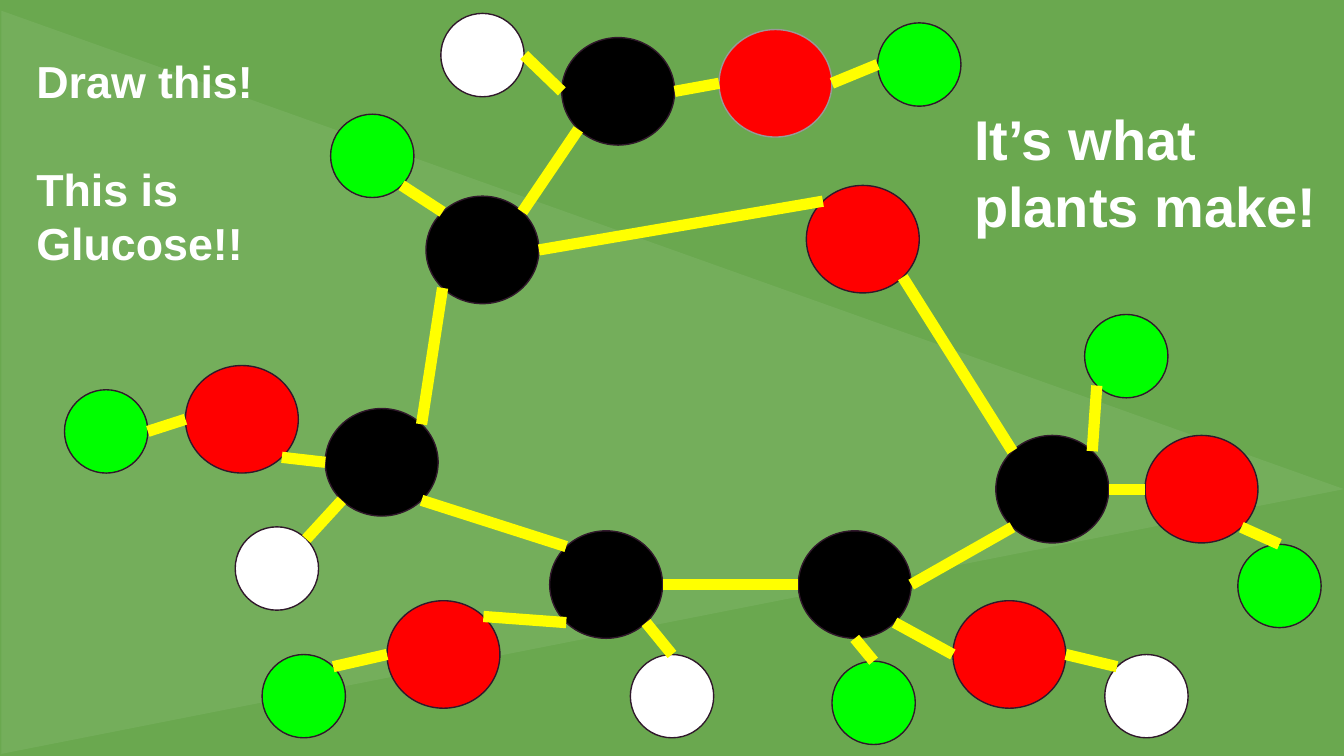
from dataclasses import dataclass
from math import cos, radians, sin
from typing import NamedTuple

from pptx import Presentation
from pptx import util as u
from pptx.dml.color import RGBColor
from pptx.enum import shapes, text
from pptx.oxml.ns import qn
from lxml import etree

PX = 9144  # EMU per px: 100 px to the inch
SLIDE_WIDTH = 1000 * PX
SLIDE_HEIGHT = SLIDE_WIDTH * 9 // 16


@dataclass(frozen=True)
class Theme:
    background: str = "6AA84F"
    beam: str = "FFFFFF"
    beam_alpha: int = 7
    ink: str = "FFFFFF"
    bond: str = "FFFF00"
    outline: str = "30182B"
    soft_outline: str = "999999"
    font: str = "Arial"
    title_size: int = 24
    remark_size: int = 30
    bond_width: int = 6
    outline_width: float = 0.75


THEME = Theme()


class Element(NamedTuple):
    width: int
    height: int
    color: str


CARBON = Element(84, 80, "000000")
OXYGEN = Element(84, 80, "FF0000")
GREEN_HYDROGEN = Element(62, 62, "00FF00")
WHITE_HYDROGEN = Element(62, 62, "FFFFFF")


class Atom(NamedTuple):
    element: Element
    left: int
    top: int
    outline: str = THEME.outline


class Bond(NamedTuple):
    start: str
    start_side: str
    end: str
    end_side: str


# Carbons are numbered as in glucose; other atoms take their carbon's number
ATOMS = {
    "C5": Atom(CARBON, 317, 146),
    "C4": Atom(CARBON, 242, 304),
    "C3": Atom(CARBON, 409, 395),
    "C2": Atom(CARBON, 594, 395),
    "C1": Atom(CARBON, 741, 324),
    "C6": Atom(CARBON, 418, 28),
    "O5": Atom(OXYGEN, 600, 138),
    "O2": Atom(OXYGEN, 709, 447),
    "O1": Atom(OXYGEN, 852, 324),
    "O3": Atom(OXYGEN, 288, 447),
    "O4": Atom(OXYGEN, 138, 272),
    "O6": Atom(OXYGEN, 535, 22, THEME.soft_outline),
    "H5": Atom(GREEN_HYDROGEN, 246, 85),
    "HO4": Atom(GREEN_HYDROGEN, 48, 290),
    "H4": Atom(WHITE_HYDROGEN, 175, 392),
    "HO3": Atom(GREEN_HYDROGEN, 195, 487),
    "H3": Atom(WHITE_HYDROGEN, 469, 487),
    "H2": Atom(GREEN_HYDROGEN, 619, 492),
    "HO2": Atom(WHITE_HYDROGEN, 822, 487),
    "HO1": Atom(GREEN_HYDROGEN, 921, 405),
    "H1": Atom(GREEN_HYDROGEN, 807, 234),
    "HO6": Atom(GREEN_HYDROGEN, 653, 17),
    "H6": Atom(WHITE_HYDROGEN, 328, 10),
}

BONDS = [
    # Ring
    Bond("C5", "SW", "C4", "NE"),
    Bond("C4", "SE", "C3", "NW"),
    Bond("C3", "E", "C2", "W"),
    Bond("C2", "E", "C1", "SW"),
    Bond("C1", "NW", "O5", "SE"),
    Bond("O5", "NW", "C5", "E"),
    # Side groups
    Bond("C6", "SW", "C5", "NE"),
    Bond("C4", "W", "O4", "SE"),
    Bond("O3", "NE", "C3", "SW"),
    Bond("C2", "SE", "O2", "W"),
    Bond("C1", "E", "O1", "W"),
    Bond("C6", "E", "O6", "W"),
    # Hydrogens
    Bond("H5", "SE", "C5", "NW"),
    Bond("H6", "E", "C6", "W"),
    Bond("O6", "E", "HO6", "W"),
    Bond("C1", "NE", "H1", "SW"),
    Bond("O1", "SE", "HO1", "N"),
    Bond("O2", "E", "HO2", "NW"),
    Bond("C2", "S", "H2", "N"),
    Bond("O3", "W", "HO3", "NE"),
    Bond("C4", "SW", "H4", "NE"),
    Bond("HO4", "E", "O4", "W"),
    Bond("C3", "SE", "H3", "N"),
]

# Points on an ellipse, clockwise from the right in steps of 45 degrees
SIDES = ["E", "SE", "S", "SW", "W", "NW", "N", "NE"]


def rgb(color: str) -> RGBColor:
    return RGBColor.from_string(color)


def side_point(atom: Atom, side: str) -> tuple[int, int]:
    angle = radians(45 * SIDES.index(side))
    width, height, _ = atom.element
    x = atom.left + width / 2 * (1 + cos(angle))
    y = atom.top + height / 2 * (1 + sin(angle))
    return round(x * PX), round(y * PX)


def draw_beam(slide) -> None:
    builder = slide.shapes.build_freeform(1, 8, scale=PX)
    builder.add_line_segments([(1000, 364), (1, 561)], close=True)
    beam = builder.convert_to_shape()
    beam.shadow.inherit = False
    beam.line.fill.background()
    beam.fill.solid()
    beam.fill.fore_color.rgb = rgb(THEME.beam)
    color = beam.fill._xPr.find(".//" + qn("a:srgbClr"))
    etree.SubElement(color, qn("a:alpha"), val=str(THEME.beam_alpha * 1000))


def draw_atom(slide, atom: Atom) -> None:
    width, height, color = atom.element
    ball = slide.shapes.add_shape(shapes.MSO_SHAPE.OVAL, atom.left * PX,
                                  atom.top * PX, width * PX, height * PX)
    ball.shadow.inherit = False
    ball.fill.solid()
    ball.fill.fore_color.rgb = rgb(color)
    ball.line.color.rgb = rgb(atom.outline)
    ball.line.width = u.Pt(THEME.outline_width)


def draw_bond(slide, bond: Bond) -> None:
    start = side_point(ATOMS[bond.start], bond.start_side)
    end = side_point(ATOMS[bond.end], bond.end_side)
    stick = slide.shapes.add_connector(shapes.MSO_CONNECTOR.STRAIGHT, *start, *end)
    stick.line.color.rgb = rgb(THEME.bond)
    stick.line.width = u.Pt(THEME.bond_width)
    etree.SubElement(stick._element.spPr, qn("a:effectLst"))


def write(box, lines: list[str], size: int, space_before: int = 0) -> None:
    frame = box.text_frame
    frame.text = "\n".join(lines)
    frame.word_wrap = True
    frame.auto_size = text.MSO_AUTO_SIZE.NONE
    frame.vertical_anchor = text.MSO_ANCHOR.TOP
    frame.margin_left = frame.margin_right = 10 * PX
    frame.margin_top = frame.margin_bottom = 10 * PX
    for index, paragraph in enumerate(frame.paragraphs):
        paragraph.alignment = text.PP_ALIGN.LEFT
        paragraph.line_spacing = 1.0
        paragraph.space_before = u.Pt(space_before if index else 0)
        for run in paragraph.runs:
            run.font.name = THEME.font
            run.font.size = u.Pt(size)
            run.font.bold = True
            run.font.color.rgb = rgb(THEME.ink)


def main() -> None:
    deck = Presentation()
    deck.slide_width, deck.slide_height = SLIDE_WIDTH, SLIDE_HEIGHT
    slide = deck.slides.add_slide(deck.slide_layouts.get_by_name("Title Only"))
    slide.background.fill.solid()
    slide.background.fill.fore_color.rgb = rgb(THEME.background)
    draw_beam(slide)

    # Molecule
    for atom in ATOMS.values():
        draw_atom(slide, atom)
    for bond in BONDS:
        draw_bond(slide, bond)

    # Wording
    title = slide.shapes.title
    title.left, title.top, title.width, title.height = (
        17 * PX, 30 * PX, 282 * PX, 204 * PX)
    write(title, ["Draw this!", "This is Glucose!!"], THEME.title_size, space_before=29)
    remark = slide.shapes.add_textbox(715 * PX, 68 * PX, 301 * PX, 118 * PX)
    write(remark, ["It’s what plants make!"], THEME.remark_size)

    deck.save("out.pptx")


if __name__ == "__main__":
    main()
